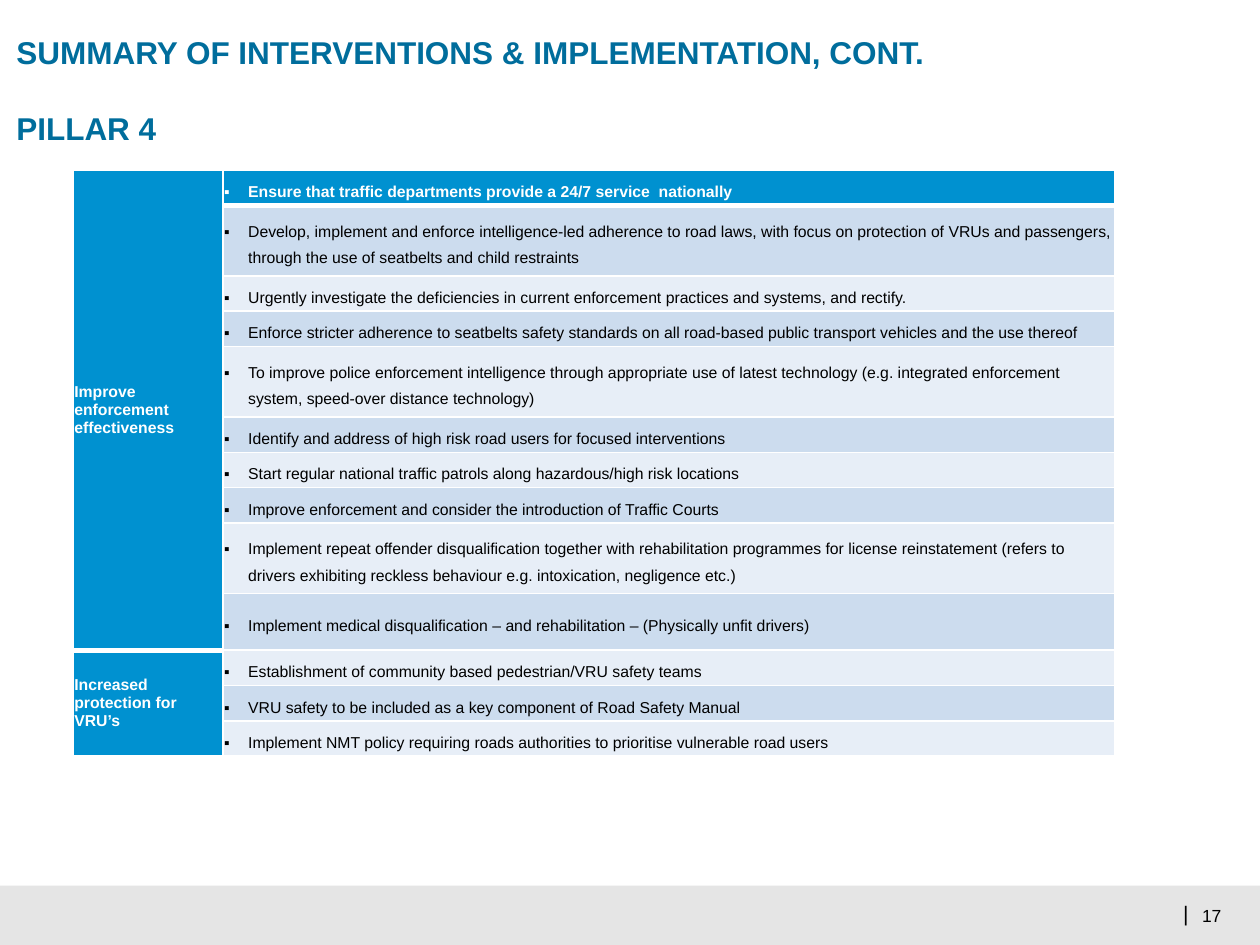
from dataclasses import dataclass

from lxml import etree
from pptx import Presentation
from pptx.dml.color import RGBColor
from pptx.enum.shapes import MSO_SHAPE
from pptx.enum.text import MSO_ANCHOR, MSO_AUTO_SIZE, PP_ALIGN
from pptx.oxml.ns import qn
from pptx.util import Inches, Pt

RECTANGLE = MSO_SHAPE.RECTANGLE
TOP, MIDDLE = MSO_ANCHOR.TOP, MSO_ANCHOR.MIDDLE
LEFT, RIGHT = PP_ALIGN.LEFT, PP_ALIGN.RIGHT
GROW = MSO_AUTO_SIZE.SHAPE_TO_FIT_TEXT

TITLE_LINES = ["SUMMARY OF INTERVENTIONS & IMPLEMENTATION, CONT.", "PILLAR 4"]
PILLAR = {
    "Improve enforcement effectiveness": [
        "Ensure that traffic departments provide a 24/7 service  nationally",
        "Develop, implement and enforce intelligence-led adherence to road laws, with focus on "
        "protection of VRUs and passengers, through the use of seatbelts and child restraints",
        "Urgently investigate the deficiencies in current enforcement practices and systems, and rectify.",
        "Enforce stricter adherence to seatbelts safety standards on all road-based public "
        "transport vehicles and the use thereof",
        "To improve police enforcement intelligence through appropriate use of latest technology "
        "(e.g. integrated enforcement system, speed-over distance technology)",
        "Identify and address of high risk road users for focused interventions",
        "Start regular national traffic patrols along hazardous/high risk locations",
        "Improve enforcement and consider the introduction of Traffic Courts",
        "Implement repeat offender disqualification together with rehabilitation programmes for "
        "license reinstatement (refers to drivers exhibiting reckless behaviour e.g. intoxication, "
        "negligence etc.)",
        "Implement medical disqualification – and rehabilitation – (Physically unfit drivers)",
    ],
    "Increased protection for VRU’s": [
        "Establishment of community based pedestrian/VRU safety teams",
        "VRU safety to be included as a key component of Road Safety Manual",
        "Implement NMT policy requiring roads authorities to prioritise vulnerable road users",
    ],
}
COLUMN_WIDTHS = [1.19, 7.08]
ROW_HEIGHT = 0.28
SPECIAL_HEIGHTS = {1: 0.56, 4: 0.56, 8: 0.56, 9: 0.42}


@dataclass(frozen=True)
class Theme:
    font: str = "Arial"
    title: str = "006D9C"
    header: str = "0091D0"
    bands: tuple = ("E7EEF7", "CCDCEE")
    footer: str = "E5E5E5"
    light: str = "FFFFFF"
    dark: str = "000000"
    title_size: float = 18
    table_size: float = 9
    number_size: float = 10
    divider_size: float = 12
    thin: float = 1
    thick: float = 3


class SlideBuilder:
    def __init__(self, slide, theme):
        self.slide = slide
        self.theme = theme

    def style_runs(self, paragraph, size, color, bold=False):
        for run in paragraph.runs:
            run.font.name = self.theme.font
            run.font.size = Pt(size)
            run.font.bold = bold
            run.font.color.rgb = RGBColor.from_string(color)

    def clear_margins(self, frame):
        frame.margin_left = frame.margin_right = frame.margin_top = frame.margin_bottom = 0

    def title(self, lines, left, top, width, height):
        heading = self.slide.shapes.title
        heading.left, heading.top = Inches(left), Inches(top)
        heading.width, heading.height = Inches(width), Inches(height)
        frame = heading.text_frame
        frame.text = "\n".join(lines)
        self.clear_margins(frame)
        frame.vertical_anchor = TOP
        frame.auto_size = GROW
        for index, paragraph in enumerate(frame.paragraphs):
            paragraph.alignment = LEFT
            paragraph.space_before = Pt(22 if index else 0)
            self.style_runs(paragraph, self.theme.title_size, self.theme.title, True)

    def band(self, left, top, width, height):
        strip = self.slide.shapes.add_shape(
            RECTANGLE, Inches(left), Inches(top), Inches(width), Inches(height))
        strip.shadow.inherit = False
        strip.fill.solid()
        strip.fill.fore_color.rgb = RGBColor.from_string(self.theme.footer)
        strip.line.fill.background()

    def label(self, text, left, top, width, height, size, alignment=LEFT):
        box = self.slide.shapes.add_textbox(
            Inches(left), Inches(top), Inches(width), Inches(height))
        frame = box.text_frame
        frame.text = text
        frame.word_wrap = False
        frame.vertical_anchor = MIDDLE
        self.clear_margins(frame)
        frame.paragraphs[0].alignment = alignment
        self.style_runs(frame.paragraphs[0], size, self.theme.dark)

    def cell(self, cell, fill, top_width, bottom_width):
        properties = cell._tc.get_or_add_tcPr()
        thin = self.theme.thin
        for side, width in zip("LRTB", (thin, thin, top_width, bottom_width)):
            border = etree.SubElement(properties, qn(f"a:ln{side}"), w=str(Pt(width)))
            solid = etree.SubElement(border, qn("a:solidFill"))
            etree.SubElement(solid, qn("a:srgbClr"), val=self.theme.light)
        cell.fill.solid()
        cell.fill.fore_color.rgb = RGBColor.from_string(fill)
        cell.margin_left = cell.margin_right = Inches(0.01)
        cell.margin_top = cell.margin_bottom = 0
        cell.vertical_anchor = MIDDLE

    def cell_text(self, cell, text, color, bold, bulleted):
        cell.text_frame.text = text
        paragraph = cell.text_frame.paragraphs[0]
        if bulleted:
            properties = paragraph._p.get_or_add_pPr()
            properties.set("marL", str(Inches(0.19)))
            properties.set("indent", str(-Inches(0.19)))
            etree.SubElement(properties, qn("a:buFont"), typeface=self.theme.font)
            etree.SubElement(properties, qn("a:buChar"), char="▪")
            paragraph.line_spacing = 1.5
        paragraph.space_after = Pt(2)
        self.style_runs(paragraph, self.theme.table_size, color, bold)

    def interventions(self, groups, left, top):
        theme = self.theme
        row_count = sum(len(actions) for actions in groups.values())
        table = self.slide.shapes.add_table(
            row_count, len(COLUMN_WIDTHS), Inches(left), Inches(top),
            Inches(sum(COLUMN_WIDTHS)), Inches(ROW_HEIGHT * row_count)).table
        table.first_row = table.horz_banding = False
        for column, width in zip(table.columns, COLUMN_WIDTHS):
            column.width = Inches(width)
        for index, row in enumerate(table.rows):
            row.height = Inches(SPECIAL_HEIGHTS.get(index, ROW_HEIGHT))

        start = 0
        for goal, actions in groups.items():
            end = start + len(actions)
            goal_top = theme.thick if start else theme.thin
            goal_bottom = theme.thick if end < row_count else theme.thin
            for index, action in enumerate(actions, start):
                self.cell(table.cell(index, 0), theme.header, goal_top, goal_bottom)
                is_head = index == 0
                action_cell = table.cell(index, 1)
                self.cell(action_cell, theme.header if is_head else theme.bands[index % 2],
                          theme.thick if index == 1 else theme.thin,
                          theme.thick if is_head else theme.thin)
                self.cell_text(action_cell, action,
                               theme.light if is_head else theme.dark, is_head, True)
            goal_cell = table.cell(start, 0)
            goal_cell.merge(table.cell(end - 1, 0))
            self.cell_text(goal_cell, goal, theme.light, True, False)
            start = end


def main():
    deck = Presentation()
    deck.slide_width, deck.slide_height = Inches(10), Inches(7.5)
    theme = Theme()
    builder = SlideBuilder(deck.slides.add_slide(deck.slide_layouts[5]), theme)
    builder.band(0, 7.03, 10, 0.47)
    builder.label("17", 9.54, 7.18, 0.18, 0.17, theme.number_size)
    builder.label("|", 9.39, 7.15, 0.04, 0.2, theme.divider_size, RIGHT)
    builder.title(TITLE_LINES, 0.13, 0.26, 9.62, 0.91)
    builder.interventions(PILLAR, 0.58, 1.35)
    deck.save("out.pptx")


if __name__ == "__main__":
    main()
